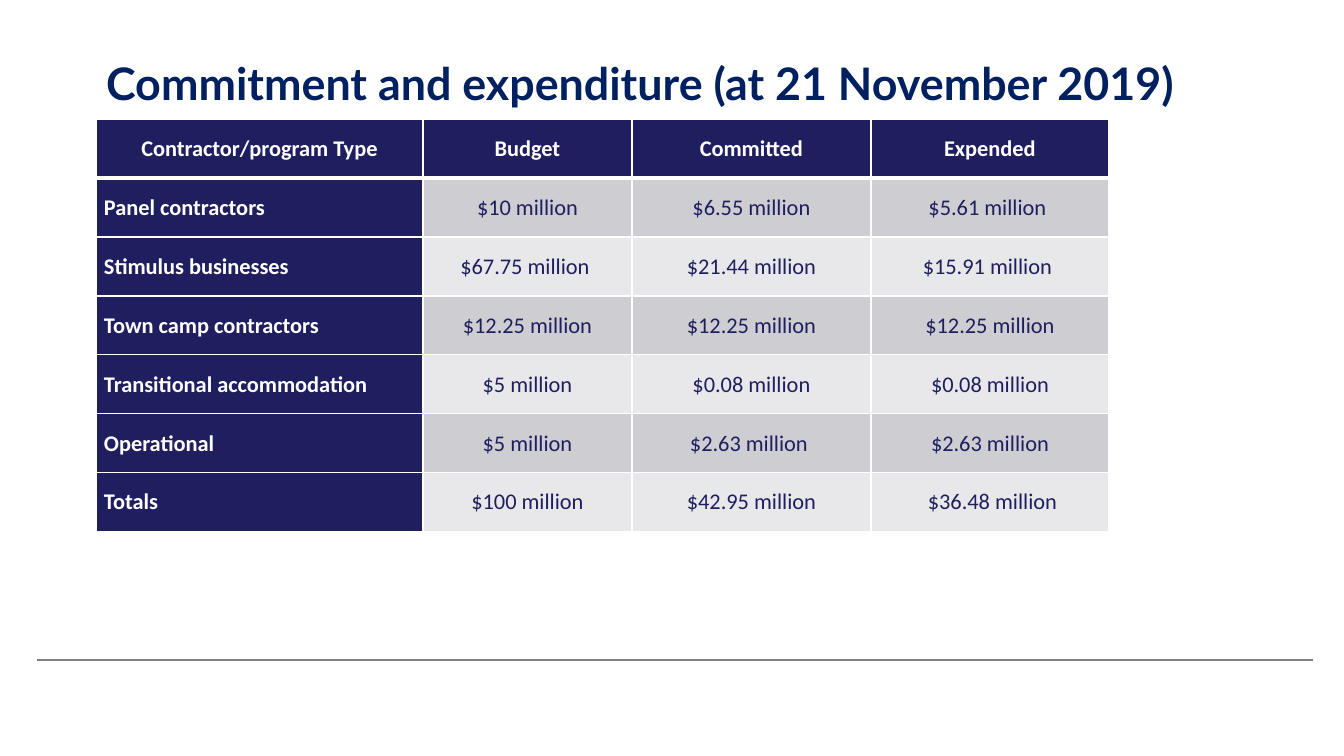
from lxml import etree
from pptx import Presentation, util as u
from pptx.dml.color import RGBColor
from pptx.enum import shapes, text
from pptx.oxml.ns import qn

PX = 914400 / 100.8
THEME = {
    "title": {"name": "Lato", "size": u.Pt(32), "bold": True, "color": "002060"},
    "label": {"name": "Calibri", "size": u.Pt(16), "bold": True, "color": "FFFFFF"},
    "amount": {"name": "Calibri", "size": u.Pt(16), "bold": False, "color": "1F1F5F"},
    "navy": "1F1F5F",
    "bands": ["CDCDD2", "E8E8EA"],
    "border": "FFFFFF",
    "rule": "808080",
}


def px(length):
    return u.Emu(round(length * PX))


def style(font, look):
    for key, value in look.items():
        if key == "color":
            font.color.rgb = RGBColor.from_string(value)
        else:
            setattr(font, key, value)


deck = Presentation()
deck.slide_width, deck.slide_height = px(1344), px(756)
slide = deck.slides.add_slide(deck.slide_layouts[5])

footer_rule = slide.shapes.add_connector(
    shapes.MSO_CONNECTOR.STRAIGHT, px(37), px(660), px(1313), px(660))
footer_rule.line.color.rgb = RGBColor.from_string(THEME["rule"])
footer_rule.line.width = u.Pt(1)
etree.SubElement(footer_rule._element.spPr, qn("a:effectLst"))

heading = slide.shapes.title
for side, length in {"left": 96, "top": 39, "width": 1158, "height": 80}.items():
    setattr(heading, side, px(length))
heading.text_frame.text = "Commitment and expenditure (at 21 November 2019)"
heading.text_frame.vertical_anchor = text.MSO_ANCHOR.MIDDLE
heading.text_frame.auto_size = text.MSO_AUTO_SIZE.NONE
heading.text_frame.word_wrap = True
heading_line = heading.text_frame.paragraphs[0]
heading_format = {
    "alignment": text.PP_ALIGN.LEFT,
    "line_spacing": u.Pt(43.9),
    "space_before": u.Pt(0),
    "space_after": u.Pt(14.6),
}
for key, value in heading_format.items():
    setattr(heading_line, key, value)
style(heading_line.runs[0].font, THEME["title"])

spending = [
    ["Contractor/program Type", "Budget", "Committed", "Expended"],
    ["Panel contractors", "$10 million", "$6.55 million", "$5.61 million "],
    ["Stimulus businesses", "$67.75 million ", "$21.44 million", "$15.91 million "],
    ["Town camp contractors", "$12.25 million", "$12.25 million", "$12.25 million"],
    ["Transitional accommodation", "$5 million", "$0.08 million", "$0.08 million"],
    ["Operational", "$5 million", "$2.63 million ", "$2.63 million"],
    ["Totals", "$100 million", "$42.95 million", " $36.48 million"],
]
column_widths = [327, 209, 239, 238]
row_height = 59
cell_format = {
    "margin_left": px(8),
    "margin_right": px(8),
    "margin_top": px(15),
    "margin_bottom": px(15),
    "vertical_anchor": text.MSO_ANCHOR.MIDDLE,
}

grid = slide.shapes.add_table(
    len(spending), len(column_widths), px(96), px(119),
    px(sum(column_widths)), px(row_height * len(spending))).table
for column, width in zip(grid.columns, column_widths):
    column.width = px(width)

for r, entries in enumerate(spending):
    grid.rows[r].height = px(row_height)
    for c, entry in enumerate(entries):
        cell = grid.cell(r, c)
        is_label = r == 0 or c == 0
        cell.text = entry
        for key, value in cell_format.items():
            setattr(cell, key, value)
        entry_line = cell.text_frame.paragraphs[0]
        entry_line.alignment = (
            text.PP_ALIGN.LEFT if r and c == 0 else text.PP_ALIGN.CENTER)
        style(entry_line.runs[0].font, THEME["label" if is_label else "amount"])

        for edge in ("lnL", "lnR", "lnT", "lnB"):
            points = 3 if r == 0 and edge == "lnB" else 1
            border = etree.SubElement(
                cell._tc.get_or_add_tcPr(), qn("a:" + edge), w=str(u.Pt(points)))
            paint = etree.SubElement(border, qn("a:solidFill"))
            etree.SubElement(paint, qn("a:srgbClr"), val=THEME["border"])
        cell.fill.solid()
        cell.fill.fore_color.rgb = RGBColor.from_string(
            THEME["navy"] if is_label else THEME["bands"][(r - 1) % 2])

deck.save("out.pptx")
